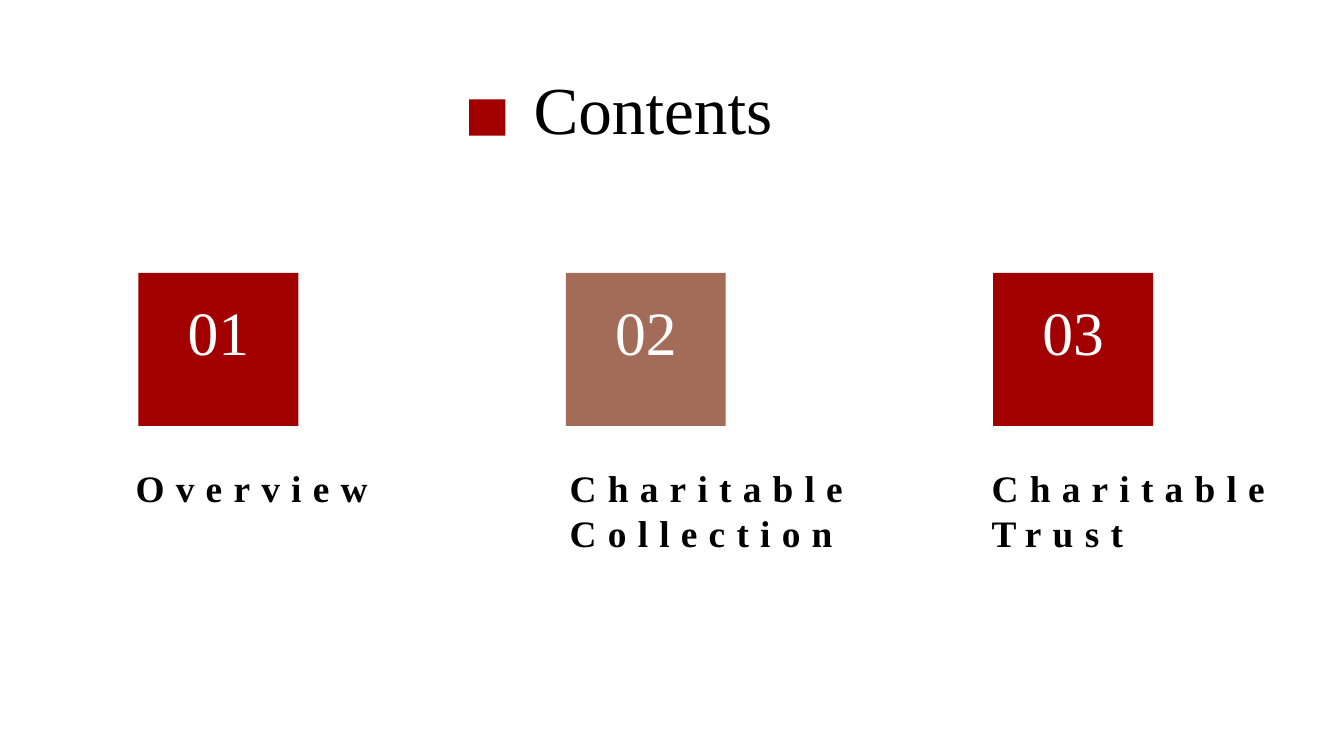
from dataclasses import dataclass

from pptx import Presentation
from pptx import util as u
from pptx.dml.color import RGBColor
from pptx.enum import shapes, text


@dataclass(frozen=True)
class Theme:
    font: str = "Times New Roman"
    red: str = "A20000"
    brown: str = "A36C58"
    ink: str = "000000"
    paper: str = "FFFFFF"
    title_size: int = 36
    number_size: int = 33
    label_size: int = 20
    label_tracking: int = 600


THEME = Theme()
SLIDE_WIDTH = 10
SLIDE_HEIGHT = SLIDE_WIDTH * 9 / 16
FIRST_COLUMN, COLUMN_PITCH = 1.03, 3.18
TILE_TOP, TILE_WIDTH, TILE_HEIGHT = 2.03, 1.19, 1.14
NUMBER_TOP, NUMBER_HEIGHT = 2.14, 0.66
LABEL_TOP = 3.41

SECTIONS = [
    ("Overview", THEME.red, (0.91, 2.95, 0.53)),
    ("Charitable Collection", THEME.brown, (4.14, 3.31, 0.77)),
    ("Charitable Trust", THEME.red, (7.28, 2.37, 0.77)),
]


def inches(*lengths):
    return [u.Inches(length) for length in lengths]


def write(holder, words, size, color, bold=False, align=text.PP_ALIGN.LEFT):
    frame = holder.text_frame
    frame.text = words
    frame.word_wrap = True
    frame.auto_size = text.MSO_AUTO_SIZE.SHAPE_TO_FIT_TEXT
    frame.vertical_anchor = text.MSO_ANCHOR.TOP
    paragraph = frame.paragraphs[0]
    paragraph.alignment = align
    font = paragraph.runs[0].font
    font.name = THEME.font
    font.size = u.Pt(size)
    font.bold = bold
    font.color.rgb = RGBColor.from_string(color)
    return font


def add_square(slide, box, color):
    square = slide.shapes.add_shape(shapes.MSO_SHAPE.RECTANGLE, *inches(*box))
    square.shadow.inherit = False
    square.fill.solid()
    square.fill.fore_color.rgb = RGBColor.from_string(color)
    square.line.fill.background()


def add_heading(slide):
    add_square(slide, (3.49, 0.74, 0.27, 0.27), THEME.red)
    title = slide.shapes.title
    title.left, title.top, title.width, title.height = inches(3.87, 0.45, 2.32, 0.71)
    write(title, "Contents", THEME.title_size, THEME.ink)


def add_number(slide, left, number):
    box = slide.shapes.add_textbox(*inches(left, NUMBER_TOP, TILE_WIDTH, NUMBER_HEIGHT))
    write(box, f"{number:02d}", THEME.number_size, THEME.paper,
          align=text.PP_ALIGN.CENTER)


def add_label(slide, words, left, width, height):
    box = slide.shapes.add_textbox(*inches(left, LABEL_TOP, width, height))
    font = write(box, words, THEME.label_size, THEME.ink, bold=True)
    font._element.set("spc", str(THEME.label_tracking))


def add_section(slide, index, words, color, label_box):
    left = FIRST_COLUMN + index * COLUMN_PITCH
    add_square(slide, (left, TILE_TOP, TILE_WIDTH, TILE_HEIGHT), color)
    add_label(slide, words, *label_box)
    add_number(slide, left, index + 1)


def main():
    deck = Presentation()
    deck.slide_width, deck.slide_height = inches(SLIDE_WIDTH, SLIDE_HEIGHT)
    slide = deck.slides.add_slide(deck.slide_layouts.get_by_name("Title Only"))
    slide.background.fill.solid()
    slide.background.fill.fore_color.rgb = RGBColor.from_string(THEME.paper)
    add_heading(slide)
    for index, section in enumerate(SECTIONS):
        add_section(slide, index, *section)
    deck.save("out.pptx")


if __name__ == "__main__":
    main()
